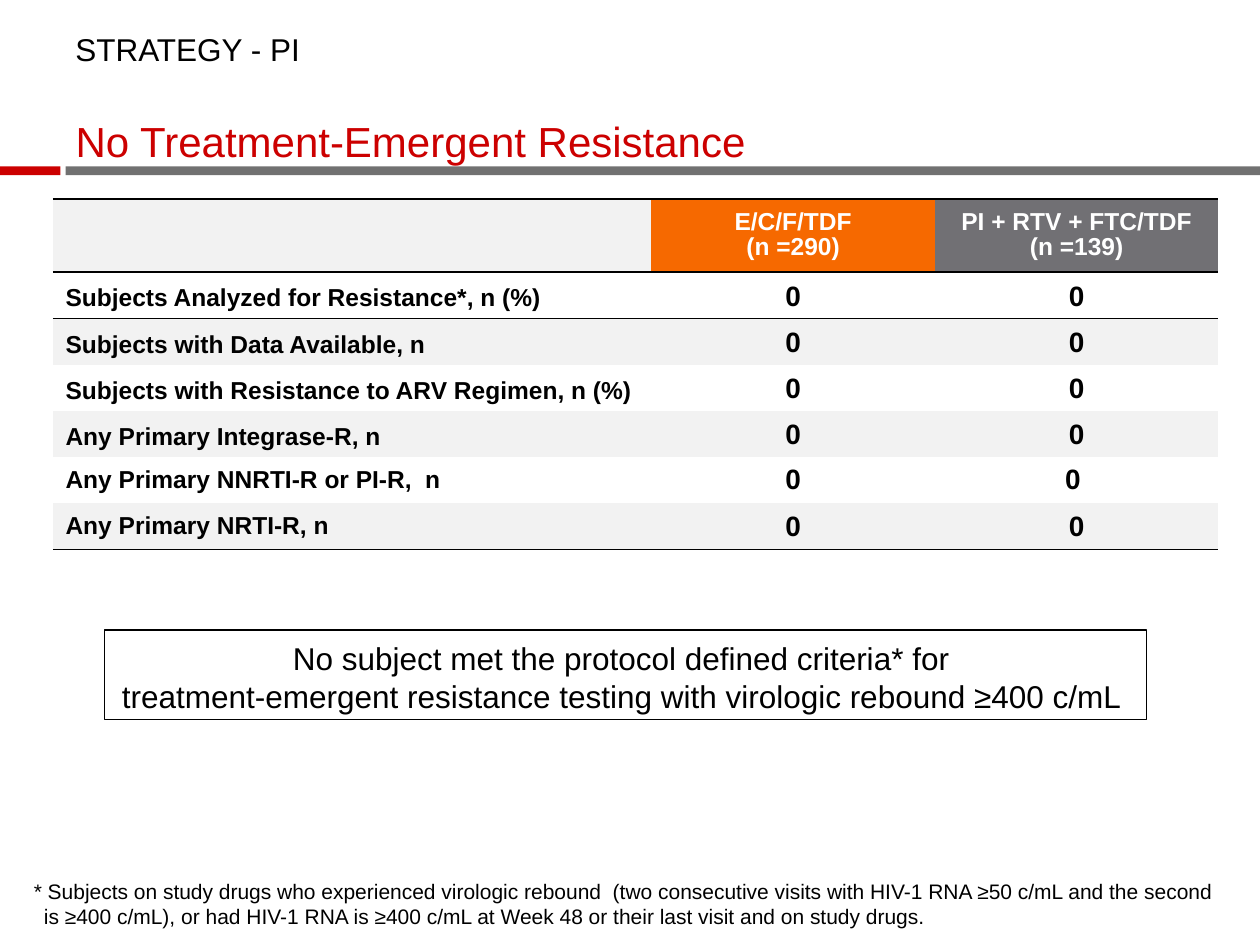
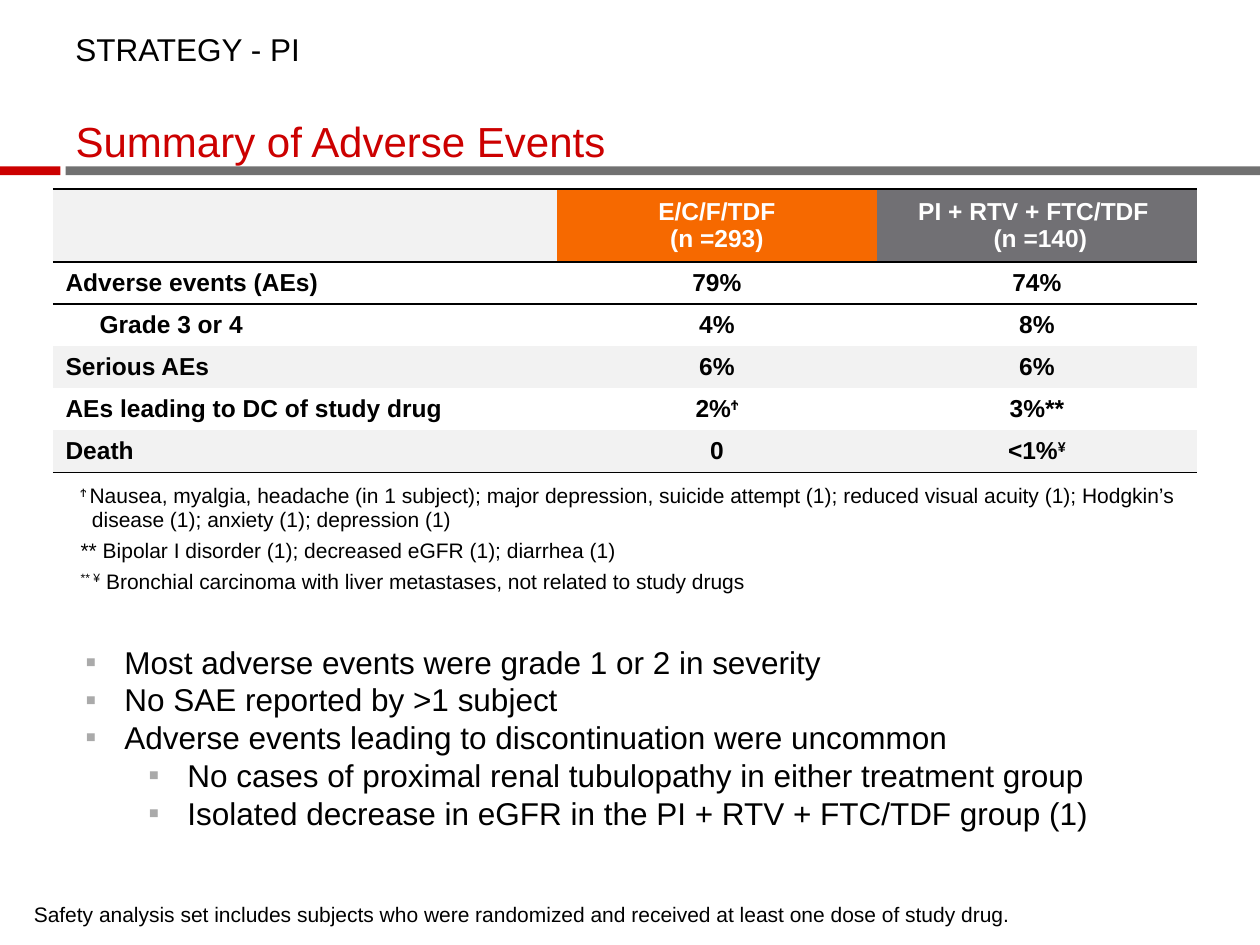
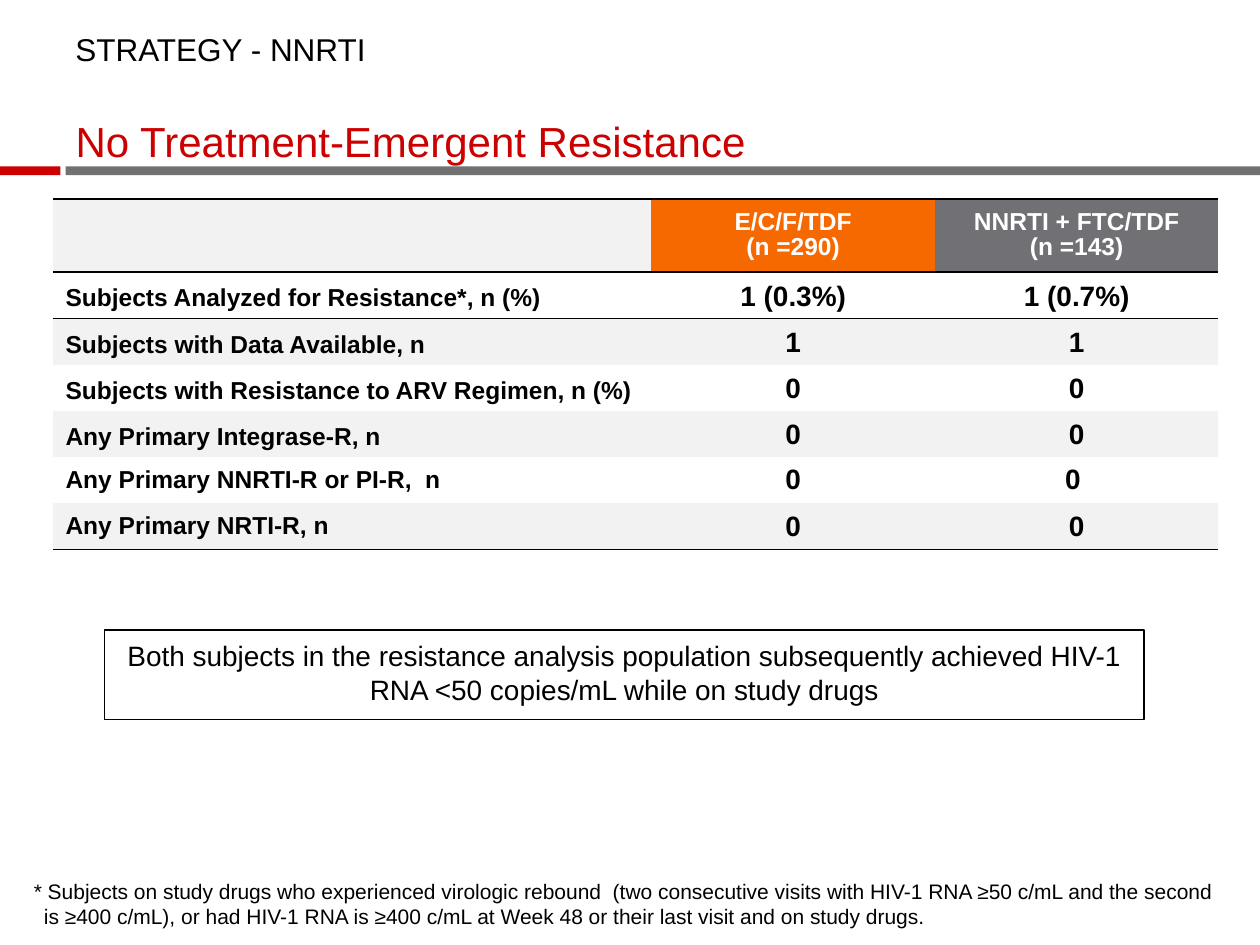
from lxml import etree
from pptx import Presentation
from pptx.dml.color import RGBColor
from pptx.enum.shapes import MSO_SHAPE
from pptx.enum.text import MSO_ANCHOR, PP_ALIGN
from pptx.oxml.ns import qn
from pptx.util import Inches, Pt

RECTANGLE = MSO_SHAPE.RECTANGLE
TOP, MIDDLE, BOTTOM = MSO_ANCHOR.TOP, MSO_ANCHOR.MIDDLE, MSO_ANCHOR.BOTTOM
LEFT, CENTER = PP_ALIGN.LEFT, PP_ALIGN.CENTER

FONT = "Arial"
COLORS = {
    "black": "000000",
    "white": "FFFFFF",
    "red": "CC0000",
    "band": "717171",
    "orange": "F66900",
    "gray": "717074",
    "stripe": "F2F2F2",
    "bullet": "AAAAAA",
}
NO_TABLE_STYLE = "{2D5ABB26-0587-4C30-8999-92F81FD0307C}"

LABEL_BOX = (0.5, 0.17, 9, 0.33)
TITLE_BOX = (0.5, 0.51, 9, 0.81)
RED_BAND_BOX = (0, 1.32, 0.48, 0.07)
GRAY_BAND_BOX = (0.52, 1.32, 9.48, 0.07)
RESISTANCE_TABLE_BOX = (0.42, 1.58, 9.25, 2.78)
EVENTS_TABLE_BOX = (0.42, 1.5, 9.08, 3.29)
BULLETS_BOX = (0.58, 5.05, 8.83, 1.62)
RESISTANCE_NOTE_BOX = (0.17, 6.92, 9.67, 0.51)
SAFETY_NOTE_BOX = (0.17, 7.11, 9.67, 0.3)

HEADER_HEIGHT = 0.58
EVENT_ROW_HEIGHT = 0.33

RESISTANCE_LABELS = [
    "Subjects Analyzed for Resistance*, n (%)",
    "Subjects with Data Available, n",
    "Subjects with Resistance to ARV Regimen, n (%)",
    "Any Primary Integrase-R, n",
    "Any Primary NNRTI-R or PI-R,  n",
    "Any Primary NRTI-R, n",
]
RESISTANCE_NOTE = (
    "* Subjects on study drugs who experienced virologic rebound  "
    "(two consecutive visits with HIV-1 RNA ≥50 c/mL and the second "
    "is ≥400 c/mL), or had HIV-1 RNA is ≥400 c/mL at Week 48 "
    "or their last visit and on study drugs."
)
EVENT_ROWS = [
    ("Adverse events (AEs)", "79%", "74%"),
    ("Grade 3 or 4", "4%", "8%"),
    ("Serious AEs", "6%", "6%"),
    ("AEs leading to DC of study drug", "2%^Ϯ", "3%**"),
    ("Death", "0", "<1%^¥"),
]
EVENT_NOTES = [
    "^Ϯ ^Nausea, myalgia, headache (in 1 subject); major depression, suicide attempt (1); "
    "reduced visual acuity (1); Hodgkin’s disease (1); anxiety (1); depression (1)",
    "** Bipolar I disorder (1); decreased eGFR (1); diarrhea (1)",
    "^** ¥^ Bronchial carcinoma with liver metastases, not related to study drugs",
]
EVENT_BULLETS = [
    (0, "Most adverse events were grade 1 or 2 in severity"),
    (0, "No SAE reported by >1 subject"),
    (0, "Adverse events leading to discontinuation were uncommon"),
    (1, "No cases of proximal renal tubulopathy in either treatment group"),
    (1, "Isolated decrease in eGFR in the PI + RTV + FTC/TDF group (1)"),
]


def color(name):
    """Return the named colour."""
    return RGBColor.from_string(COLORS[name])


def inches(box):
    """Convert a box of numbers to lengths."""
    return [Inches(value) for value in box]


def write_text(frame, lines, size, color_name="black", bold=False, align=LEFT, spacing=1.0):
    """Write one paragraph per line; a caret switches superscript on and off."""
    for index, line in enumerate(lines):
        paragraph = frame.add_paragraph() if index else frame.paragraphs[0]
        paragraph.alignment = align
        paragraph.line_spacing = spacing
        for part_index, part in enumerate(line.split("^")):
            if not part:
                continue
            run = paragraph.add_run()
            run.text = part
            run.font.name = FONT
            run.font.size = Pt(size)
            run.font.bold = bold
            run.font.color.rgb = color(color_name)
            if part_index % 2:
                run.font._element.set("baseline", "30000")
    return frame.paragraphs


def set_indent(paragraph, margin, first_line=0):
    """Set the left margin and first-line indent of a paragraph."""
    properties = paragraph._p.get_or_add_pPr()
    properties.set("marL", str(Inches(margin)))
    properties.set("indent", str(Inches(first_line)))
    return properties


def add_text(slide, box, lines, size):
    """Add a wrapping text box and return its frame."""
    frame = slide.shapes.add_textbox(*inches(box)).text_frame
    frame.word_wrap = True
    write_text(frame, lines, size)
    return frame


def add_rectangle(slide, box):
    """Add a rectangle without shadow, fill or line."""
    shape = slide.shapes.add_shape(RECTANGLE, *inches(box))
    shape.shadow.inherit = False
    shape.fill.background()
    shape.line.fill.background()
    return shape


def start_slide(presentation, study, title):
    """Add a slide with its bands, study label and title."""
    slide = presentation.slides.add_slide(presentation.slide_layouts[5])
    for box, name in ((GRAY_BAND_BOX, "band"), (RED_BAND_BOX, "red")):
        band = add_rectangle(slide, box)
        band.fill.solid()
        band.fill.fore_color.rgb = color(name)
    add_text(slide, LABEL_BOX, [study], 18).margin_top = Inches(0.07)
    placeholder = slide.shapes.title
    placeholder.left, placeholder.top, placeholder.width, placeholder.height = inches(TITLE_BOX)
    frame = placeholder.text_frame
    frame.vertical_anchor = BOTTOM
    frame.margin_bottom = 0
    write_text(frame, [title], 24, "red", spacing=0.9)
    return slide


def add_borders(cell, sides):
    """Draw black rules on the given sides, in the order lnT, lnB."""
    properties = cell._tc.get_or_add_tcPr()
    for index, side in enumerate(sides):
        line = etree.Element(qn(f"a:{side}"), w=str(Pt(1)))
        fill = etree.SubElement(line, qn("a:solidFill"))
        etree.SubElement(fill, qn("a:srgbClr"), val=COLORS["black"])
        properties.insert(index, line)


def fill_cell(cell, fill, lines=(), anchor=MIDDLE, sides=(), **style):
    """Fill a cell, write its text and rule its sides."""
    cell.fill.background()
    if fill:
        cell.fill.solid()
        cell.fill.fore_color.rgb = color(fill)
    cell.vertical_anchor = anchor
    add_borders(cell, sides)
    return write_text(cell.text_frame, lines, **style) if lines else []


def add_results_table(slide, box, widths, heights, headers, rows, striped,
                      value_size=14, spacing=1.0, bottom_rows=()):
    """Add a comparison table with two treatment columns."""
    table_frame = slide.shapes.add_table(len(heights), len(widths), *inches(box))
    table = table_frame.table
    table.first_row = table.horz_banding = False
    table._tbl.tblPr.find(qn("a:tableStyleId")).text = NO_TABLE_STYLE
    for column, width in zip(table.columns, widths):
        column.width = Inches(width)
    for row, height in zip(table.rows, heights):
        row.height = Inches(height)
    rules = ("lnT", "lnB")
    fill_cell(table.cell(0, 0), "stripe", sides=rules)
    for column, (lines, fill) in enumerate(zip(headers, ("orange", "gray")), 1):
        fill_cell(table.cell(0, column), fill, lines, sides=rules, size=14,
                  color_name="white", bold=True, align=CENTER, spacing=spacing)
    for row, values in enumerate(rows, 1):
        sides = ("lnT",) if row == 1 else ("lnB",) if row == len(rows) else ()
        for column, value in enumerate(values):
            fill_cell(table.cell(row, column), "stripe" if row in striped else None, [value],
                      BOTTOM if row in bottom_rows else MIDDLE, sides, bold=True,
                      size=value_size if column else 14, align=CENTER if column else LEFT)
    return table


def add_conclusion(slide, box, lines, size, wrap):
    """Add the outlined conclusion box."""
    shape = add_rectangle(slide, box)
    shape.line.color.rgb = color("black")
    shape.line.width = Pt(0.75)
    frame = shape.text_frame
    frame.word_wrap = wrap
    frame.vertical_anchor = TOP
    frame.margin_top = Inches(0.07)
    write_text(frame, lines, size, align=CENTER)


def add_bullets(slide, box, items):
    """Add a two-level list with square bullets."""
    frame = add_text(slide, box, [text for _, text in items], 18)
    for paragraph, (level, _) in zip(frame.paragraphs, items):
        paragraph.level = level
        properties = set_indent(paragraph, 0.31 + 0.5 * level, -0.31)
        bullet_color = etree.SubElement(properties, qn("a:buClr"))
        etree.SubElement(bullet_color, qn("a:srgbClr"), val=COLORS["bullet"])
        etree.SubElement(properties, qn("a:buFont"), typeface=FONT)
        etree.SubElement(properties, qn("a:buChar"), char="▪")


def build_resistance_slide(presentation, study, headers, values, conclusion_width, conclusion,
                           conclusion_size, wrap):
    """Build a resistance slide with table, conclusion and footnote."""
    slide = start_slide(presentation, study, "No Treatment-Emergent Resistance")
    rows = [(label, *pair) for label, pair in zip(RESISTANCE_LABELS, values)]
    heights = [HEADER_HEIGHT] + [(RESISTANCE_TABLE_BOX[3] - HEADER_HEIGHT) / len(rows)] * len(rows)
    add_results_table(slide, RESISTANCE_TABLE_BOX, (4.75, 2.25, 2.25), heights, headers, rows,
                      striped=(2, 4, 6), value_size=16, spacing=0.9, bottom_rows=range(1, 5))
    add_conclusion(slide, (0.83, 5, conclusion_width, 0.71), conclusion, conclusion_size, wrap)
    note = add_text(slide, RESISTANCE_NOTE_BOX, [RESISTANCE_NOTE], 12)
    set_indent(note.paragraphs[0], 0.08, -0.08)


def build_events_slide(presentation):
    """Build the adverse events slide with table, list and footnote."""
    slide = start_slide(presentation, "STRATEGY - PI", "Summary of Adverse Events")
    heights = [HEADER_HEIGHT] + [EVENT_ROW_HEIGHT] * len(EVENT_ROWS)
    heights.append(EVENTS_TABLE_BOX[3] - sum(heights))
    headers = [("E/C/F/TDF", "(n =293)"), ("PI + RTV + FTC/TDF ", " (n =140)")]
    table = add_results_table(slide, EVENTS_TABLE_BOX, (4, 2.54, 2.54), heights, headers,
                              EVENT_ROWS, striped=(3, 5))
    set_indent(table.cell(2, 0).text_frame.paragraphs[0], 0.27)
    notes_row = len(heights) - 1
    notes_cell = table.cell(notes_row, 0)
    notes_cell.merge(table.cell(notes_row, 2))
    for paragraph in fill_cell(notes_cell, None, EVENT_NOTES, size=12):
        set_indent(paragraph, 0.21, -0.09)
        paragraph.space_before = Pt(2.4)
        paragraph.space_after = Pt(1.8)
    add_bullets(slide, BULLETS_BOX, EVENT_BULLETS)
    add_text(slide, SAFETY_NOTE_BOX, [
        "Safety analysis set includes subjects who were randomized "
        "and received at least one dose of study drug."], 12)


def main():
    """Build and save the presentation."""
    presentation = Presentation()
    presentation.slide_width, presentation.slide_height = Inches(10), Inches(7.5)
    study_drug = ("E/C/F/TDF", "(n =290)")
    no_resistance = [("0", "0"), ("0", "0"), ("0", "0 "), ("0", "0")]
    build_resistance_slide(
        presentation, "STRATEGY - PI", [study_drug, ("PI + RTV + FTC/TDF", "(n =139)")],
        [("0", "0"), ("0", "0")] + no_resistance, 8.27,
        ["No subject met the protocol defined criteria* for ",
         "treatment-emergent resistance testing with virologic rebound ≥400 c/mL "], 18, False)
    build_events_slide(presentation)
    build_resistance_slide(
        presentation, "STRATEGY - NNRTI", [study_drug, ("NNRTI + FTC/TDF", "(n =143)")],
        [("1 (0.3%)", "1 (0.7%)"), ("1", "1")] + no_resistance, 8.25,
        ["Both subjects in the resistance analysis population subsequently achieved HIV-1 "
         "RNA <50 copies/mL while on study drugs"], 16, True)
    presentation.save("out.pptx")


if __name__ == "__main__":
    main()
